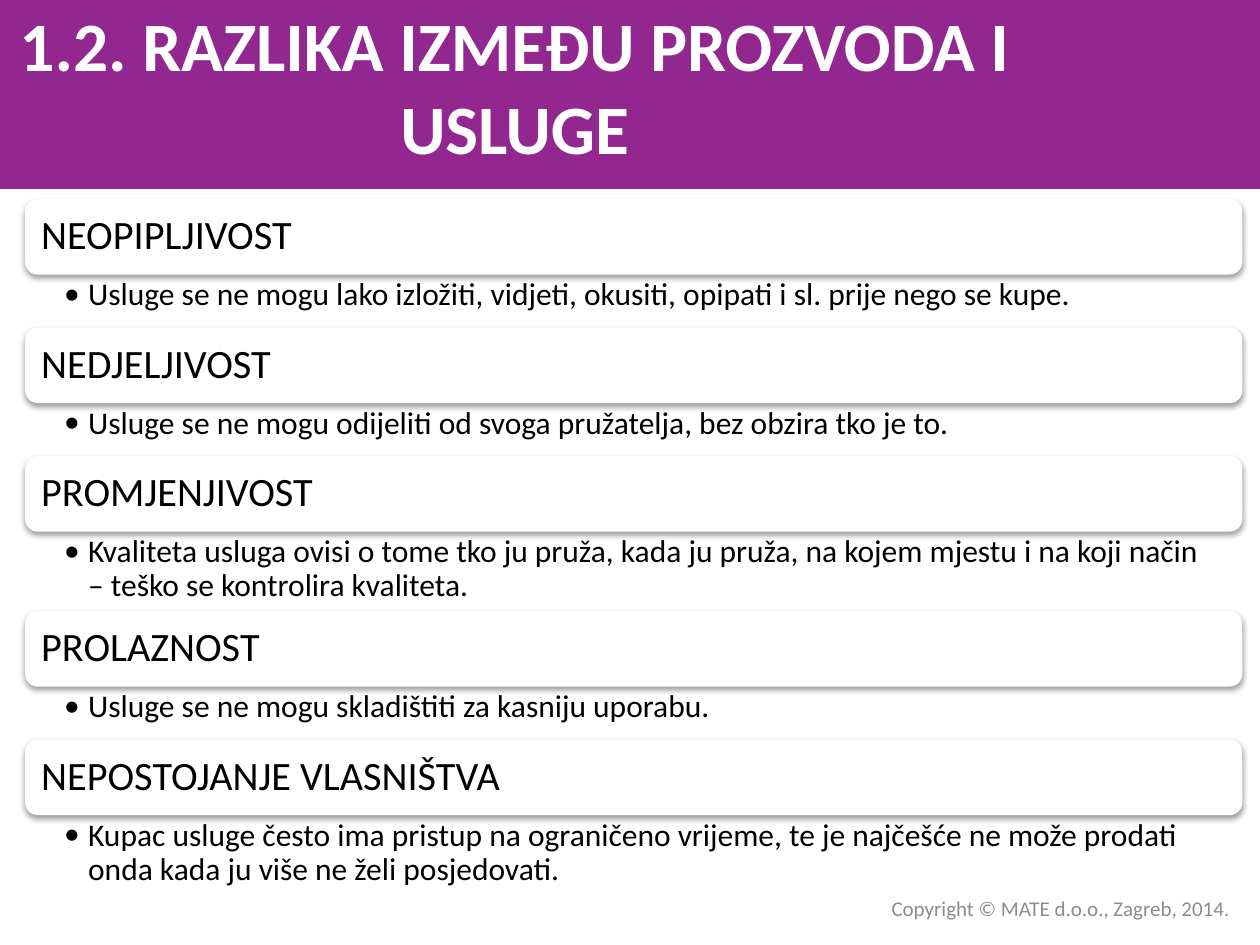
import pptx
import pptx.util
import pptx.dml.color
import pptx.enum.shapes
import pptx.enum.text
import lxml.etree
import pptx.oxml.ns

Inches = pptx.util.Inches
Pt = pptx.util.Pt
RGBColor = pptx.dml.color.RGBColor
SHAPE = pptx.enum.shapes.MSO_SHAPE
ALIGN = pptx.enum.text.PP_ALIGN
ANCHOR = pptx.enum.text.MSO_ANCHOR
qn = pptx.oxml.ns.qn

PURPLE = RGBColor(0x92, 0x27, 0x8F)
WHITE = RGBColor(0xFF, 0xFF, 0xFF)
BLACK = RGBColor(0, 0, 0)
GRAY = RGBColor(0x8C, 0x8C, 0x8C)

LEFT, WIDTH = 0.2, 9.66
TOP, HEAD = 1.58, 0.6
SHORT, TALL = 0.42, 0.63

TRAITS = [
    ("NEOPIPLJIVOST", SHORT,
     "Usluge se ne mogu lako izložiti, vidjeti, okusiti, opipati i sl. prije nego se kupe."),
    ("NEDJELJIVOST", SHORT,
     "Usluge se ne mogu odijeliti od svoga pružatelja, bez obzira tko je to."),
    ("PROMJENJIVOST", TALL,
     "Kvaliteta usluga ovisi o tome tko ju pruža, kada ju pruža, na kojem mjestu "
     "i na koji način – teško se kontrolira kvaliteta."),
    ("PROLAZNOST", SHORT,
     "Usluge se ne mogu skladištiti za kasniju uporabu."),
    ("NEPOSTOJANJE VLASNIŠTVA", TALL,
     "Kupac usluge često ima pristup na ograničeno vrijeme, te je najčešće ne može "
     "prodati onda kada ju više ne želi posjedovati."),
]


def add_block(slide, kind, box, fill):
    block = slide.shapes.add_shape(kind, *map(Inches, box))
    block.shadow.inherit = False
    block.fill.solid()
    block.fill.fore_color.rgb = fill
    block.line.fill.background()
    return block


def add_shade(shape):
    effects = shape._element.spPr.find(qn("a:effectLst"))
    shade = lxml.etree.SubElement(
        effects, qn("a:outerShdw"), blurRad=str(Pt(3.1)), dist=str(Pt(1.6)),
        dir="5400000", rotWithShape="0")
    color = lxml.etree.SubElement(shade, qn("a:srgbClr"), val="000000")
    lxml.etree.SubElement(color, qn("a:alpha"), val="38000")


def add_bullet(para):
    props = para._p.get_or_add_pPr()
    props.set("marL", str(Inches(0.19)))
    props.set("indent", str(Inches(-0.19)))
    lxml.etree.SubElement(props, qn("a:buFont"), typeface="Calibri")
    lxml.etree.SubElement(props, qn("a:buChar"), char="•")


def set_text(shape, text, size, color, align=ALIGN.LEFT, anchor=ANCHOR.MIDDLE,
             insets=(0.1, 0.05, 0.1, 0.05), spacing=1.0, bold=False, bullet=False):
    frame = shape.text_frame
    frame.word_wrap = True
    frame.vertical_anchor = anchor
    (frame.margin_left, frame.margin_top,
     frame.margin_right, frame.margin_bottom) = map(Inches, insets)
    para = frame.paragraphs[0]
    para.text = text
    if bullet:
        add_bullet(para)
    para.alignment = align
    para.line_spacing = spacing
    para.font.name = "Calibri"
    para.font.size = Pt(size)
    para.font.bold = bold
    para.font.color.rgb = color


def add_label(slide, box, text, size, color, **style):
    label = slide.shapes.add_textbox(*map(Inches, box))
    set_text(label, text, size, color, **style)


def add_trait(slide, top, name, height, note):
    card = add_block(slide, SHAPE.ROUNDED_RECTANGLE, (LEFT, top, WIDTH, HEAD), WHITE)
    add_shade(card)
    set_text(card, name, 23, BLACK, insets=(0.1, 0.1, 0.1, 0.1), spacing=0.9)
    add_label(slide, (LEFT, top + HEAD, WIDTH, height), note, 18, BLACK,
              anchor=ANCHOR.TOP, insets=(0.31, 0.03, 0.18, 0.03),
              spacing=0.9, bullet=True)


def main():
    deck = pptx.Presentation()
    deck.slide_width = Inches(10)
    deck.slide_height = Inches(7.5)
    slide = deck.slides.add_slide(deck.slide_layouts[6])

    add_block(slide, SHAPE.RECTANGLE, (0, 0, 10, 1.5), PURPLE)
    top = TOP
    for name, height, note in TRAITS:
        add_trait(slide, top, name, height, note)
        top += HEAD + height
    add_label(slide, (0, 0.05, 8.17, 1.25), "1.2. RAZLIKA IZMEĐU PROZVODA I USLUGE",
              39.6, WHITE, align=ALIGN.CENTER, bold=True)
    add_label(slide, (4.69, 7.06, 5.17, 0.3), "Copyright © MATE d.o.o., Zagreb, 2014.",
              12, GRAY, align=ALIGN.RIGHT)
    deck.save("out.pptx")


if __name__ == "__main__":
    main()
